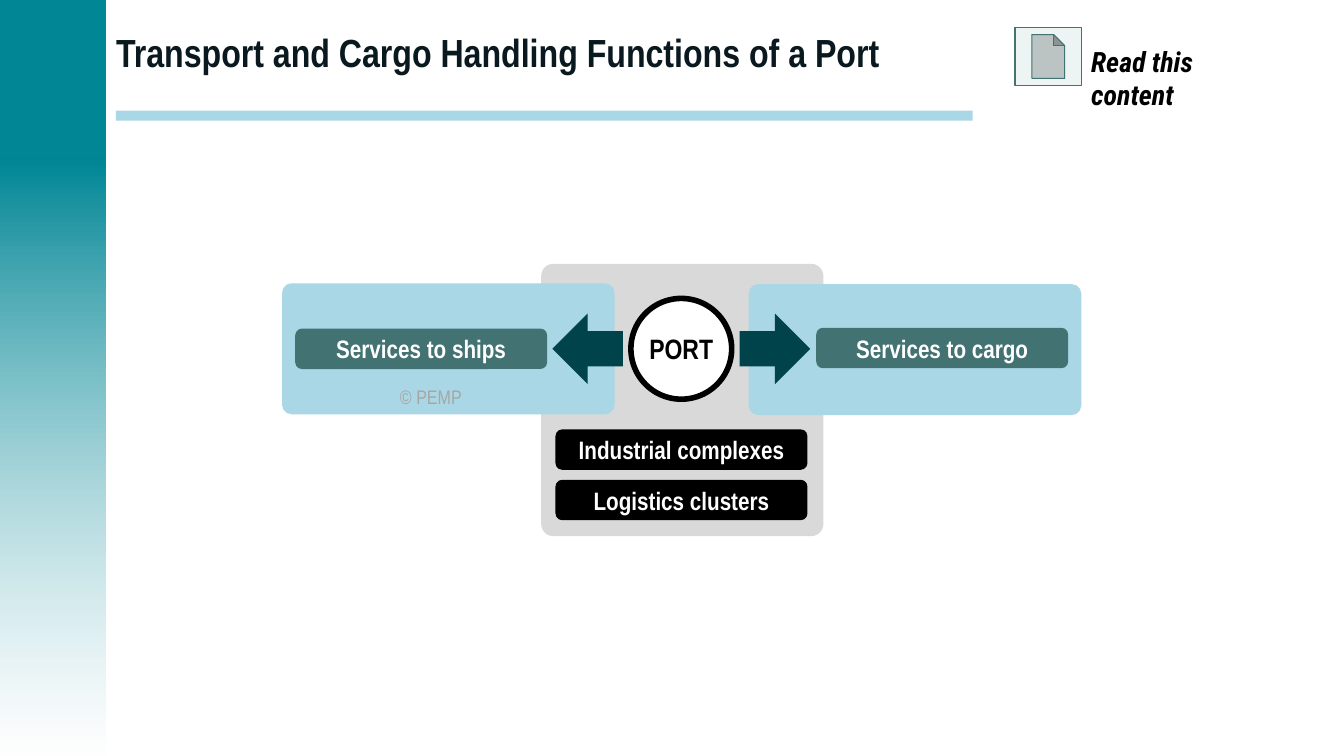
from lxml.etree import SubElement
from pptx import Presentation
from pptx.dml.color import RGBColor
from pptx.enum.shapes import MSO_SHAPE
from pptx.enum.text import MSO_ANCHOR, MSO_AUTO_SIZE, PP_ALIGN
from pptx.oxml.ns import qn
from pptx.util import Cm, Pt

TEAL = RGBColor(0x00, 0x86, 0x95)
DARK_TEAL = RGBColor(0x00, 0x43, 0x4A)
GREY_TEAL = RGBColor(0x42, 0x72, 0x72)
PALE_TEAL = RGBColor(0xEC, 0xF4, 0xF4)
LIGHT_BLUE = RGBColor(0xAA, 0xD7, 0xE6)
INK = RGBColor(0x09, 0x19, 0x1F)
BLACK = RGBColor(0x00, 0x00, 0x00)
WHITE = RGBColor(0xFF, 0xFF, 0xFF)
LIGHT_GREY = RGBColor(0xD9, 0xD9, 0xD9)
MID_GREY = RGBColor(0xA6, 0xA6, 0xA6)

NARROW = "Arial Narrow"
CONDENSED = "Roboto Condensed"


def write(tf, text, size=18, color=WHITE, font=NARROW, bold=True, italic=False,
          align=PP_ALIGN.CENTER, anchor=MSO_ANCHOR.MIDDLE, wrap=True):
    tf.auto_size = MSO_AUTO_SIZE.NONE
    tf.word_wrap = wrap
    tf.vertical_anchor = anchor
    p = tf.paragraphs[0]
    p.alignment = align
    r = p.add_run()
    r.text = text
    r.font.name = font
    r.font.size = Pt(size)
    r.font.bold = bold
    r.font.italic = italic
    r.font.color.rgb = color


def add_box(s, kind, left, top, width, height, fill, line=None, line_width=0.75,
            corner=None):
    sp = s.shapes.add_shape(kind, Cm(left), Cm(top), Cm(width), Cm(height))
    sp.shadow.inherit = False
    sp.fill.solid()
    sp.fill.fore_color.rgb = fill
    if line is None:
        sp.line.fill.background()
    else:
        sp.line.color.rgb = line
        sp.line.width = Pt(line_width)
    if corner is not None:
        sp.adjustments[0] = corner
    return sp


def add_text(s, text, left, top, width, height, inset=None, **fmt):
    tf = s.shapes.add_textbox(Cm(left), Cm(top), Cm(width), Cm(height)).text_frame
    if inset is not None:
        tf.margin_left = tf.margin_right = Cm(inset)
        tf.margin_top = tf.margin_bottom = Cm(inset)
    write(tf, text, align=PP_ALIGN.LEFT, anchor=MSO_ANCHOR.TOP, **fmt)


def add_label(s, text, left, top, fill):
    sp = add_box(s, MSO_SHAPE.ROUNDED_RECTANGLE, left, top, 6.35, 1.02, fill)
    write(sp.text_frame, text)


def add_sidebar(s):
    """Solid band at the top that fades to translucent white below."""
    add_box(s, MSO_SHAPE.RECTANGLE, -0.05, -0.03, 2.72, 4.01, TEAL)
    fade = add_box(s, MSO_SHAPE.RECTANGLE, -0.05, 3.98, 2.72, 15.07, TEAL)
    fade.fill.gradient()
    fade.fill.gradient_angle = 270
    for stop, color, position in zip(fade.fill.gradient_stops, (TEAL, WHITE), (0, 1)):
        stop.color.rgb = color
        stop.position = position
    end_color = list(fade.element.spPr.iter(qn("a:srgbClr")))[-1]
    SubElement(end_color, qn("a:alpha")).set("val", "51000")


def add_header(s):
    title = s.shapes.title
    title.left, title.top = Cm(2.67), Cm(0.03)
    title.width, title.height = Cm(30.43), Cm(2.54)
    write(title.text_frame, "Transport and Cargo Handling Functions of a Port",
          size=28, color=INK, align=PP_ALIGN.LEFT)
    add_box(s, MSO_SHAPE.RECTANGLE, 2.92, 2.79, 21.59, 0.25, LIGHT_BLUE)
    add_box(s, MSO_SHAPE.ACTION_BUTTON_DOCUMENT, 25.58, 0.69, 1.68, 1.47,
            PALE_TEAL, line=GREY_TEAL)
    add_text(s, "Read this content", 27.25, 0.99, 4.72, 1.12,
             size=20, color=BLACK, font=CONDENSED, italic=True)


def add_port_diagram(s):
    add_box(s, MSO_SHAPE.ROUNDED_RECTANGLE, 13.64, 6.65, 7.11, 6.86,
            LIGHT_GREY, corner=0.044)
    for left, top in ((7.11, 7.14), (18.87, 7.16)):
        add_box(s, MSO_SHAPE.ROUNDED_RECTANGLE, left, top, 8.38, 3.3,
                LIGHT_BLUE, corner=0.072)

    port = add_box(s, MSO_SHAPE.OVAL, 15.9, 7.52, 2.54, 2.54, WHITE,
                   line=BLACK, line_width=4)
    write(port.text_frame, "PORT", size=20, color=BLACK, wrap=False)
    for left, rotation in ((13.92, 180), (18.64, 0)):
        arrow = add_box(s, MSO_SHAPE.RIGHT_ARROW, left, 7.9, 1.78, 1.78, DARK_TEAL)
        arrow.rotation = rotation

    for text, left, top, fill in (
            ("Services to ships", 7.44, 8.28, GREY_TEAL),
            ("Services to cargo", 20.57, 8.26, GREY_TEAL),
            ("Industrial complexes", 14, 10.82, BLACK),
            ("Logistics clusters", 14, 12.09, BLACK)):
        add_label(s, text, left, top, fill)
    add_text(s, "© PEMP", 10.08, 9.7, 1.7, 0.61, inset=0,
             size=14, color=MID_GREY, bold=False)


def main():
    prs = Presentation()
    prs.slide_width, prs.slide_height = Cm(33.87), Cm(19.05)
    s = prs.slides.add_slide(prs.slide_layouts[5])
    add_sidebar(s)
    add_header(s)
    add_port_diagram(s)
    prs.save("out.pptx")


if __name__ == "__main__":
    main()
